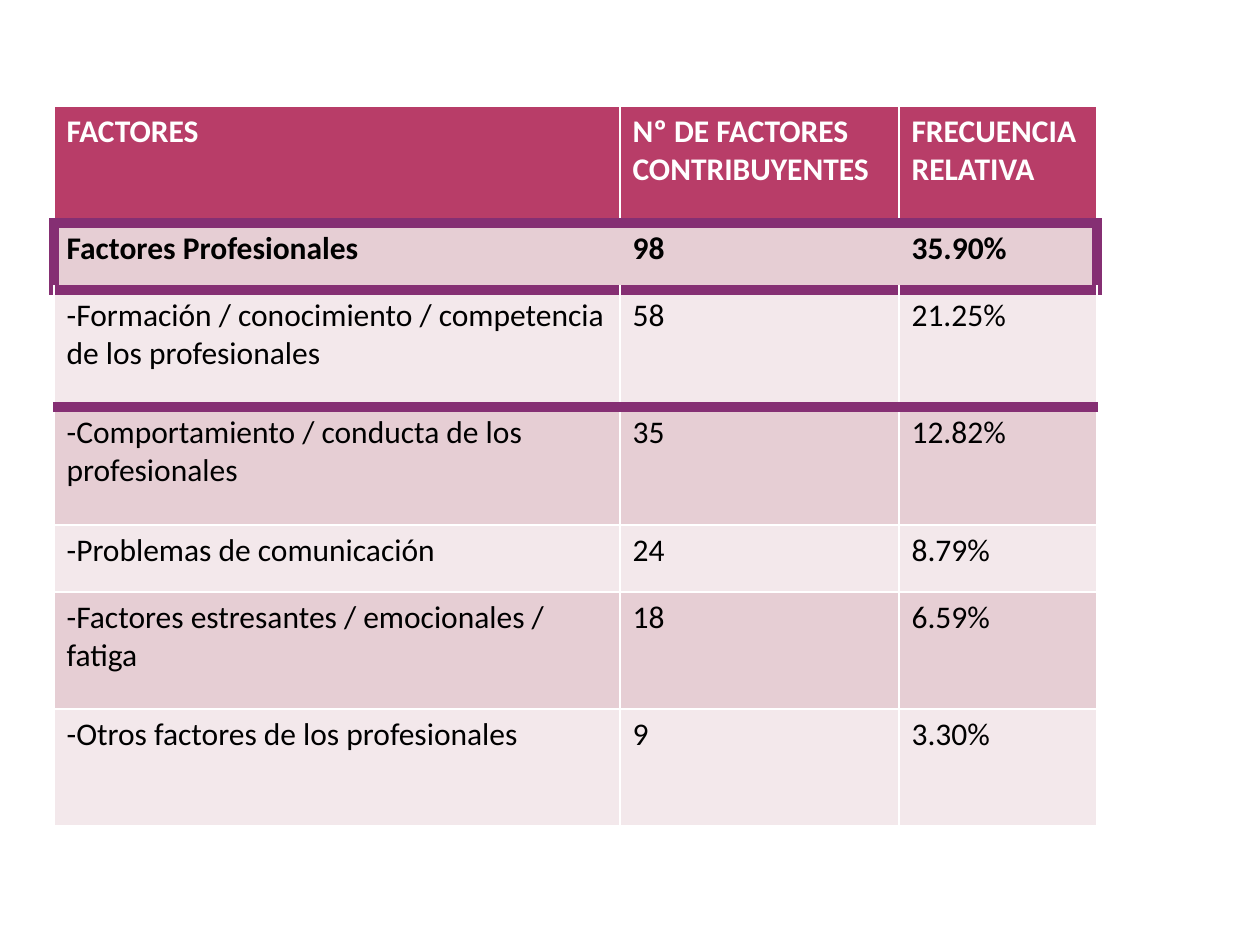
import pptx
import pptx.dml.color
import pptx.oxml.ns
import pptx.util
from lxml import etree

HEADINGS = ("FACTORES", "Nº DE FACTORES CONTRIBUYENTES", "FRECUENCIA RELATIVA")
FACTORS = [
    ("Factores Profesionales", "98", "35.90%"),
    ("-Formación / conocimiento / competencia de los profesionales", "58", "21.25%"),
    ("-Comportamiento / conducta de los profesionales", "35", "12.82%"),
    ("-Problemas de comunicación", "24", "8.79%"),
    ("-Factores estresantes / emocionales / fatiga", "18", "6.59%"),
    ("-Otros factores de los profesionales", "9", "3.30%"),
]
COLORS = {
    "header": "B83D68",
    "odd": "E6CED4",
    "even": "F3E8EB",
    "grid": "FFFFFF",
    "highlight": "852F73",
    "header_text": "FFFFFF",
    "text": "000000",
}
FONT = "Calibri"
SLIDE_SIZE = (1260, 945)
TABLE_ORIGIN = (54, 106)
COLUMN_WIDTHS = (566, 279, 198)
ROW_HEIGHTS = (117, 67, 117, 118, 67, 117, 117)
TOTAL_ROW = 1
HIGHLIGHTED_RULES = (1, 2, 3)
PX = 914400 // 126


def rgb(name):
    return pptx.dml.color.RGBColor.from_string(COLORS[name])


def add_border(cell, side, color, points):
    properties = cell._tc.get_or_add_tcPr()
    line = etree.SubElement(properties, pptx.oxml.ns.qn(f"a:ln{side}"))
    line.set("w", str(pptx.util.Pt(points)))
    if color is None:
        etree.SubElement(line, pptx.oxml.ns.qn("a:noFill"))
        return
    fill = etree.SubElement(line, pptx.oxml.ns.qn("a:solidFill"))
    etree.SubElement(fill, pptx.oxml.ns.qn("a:srgbClr")).set("val", COLORS[color])


def add_borders(cell, row, column):
    grid, highlight = ("grid", 1), ("highlight", 6)
    for side, edge in (("L", column), ("R", column + 1)):
        outer = edge in (0, len(COLUMN_WIDTHS))
        total = highlight if outer else (None, 1)
        add_border(cell, side, *(total if row == TOTAL_ROW else grid))
    for side, edge in (("T", row), ("B", row + 1)):
        add_border(cell, side, *(highlight if edge in HIGHLIGHTED_RULES else grid))


def fill_cell(cell, text, row, column):
    add_borders(cell, row, column)
    band = "header" if row == 0 else "odd" if row % 2 else "even"
    cell.fill.solid()
    cell.fill.fore_color.rgb = rgb(band)
    run = cell.text_frame.paragraphs[0].add_run()
    run.text = text
    run.font.name = FONT
    run.font.size = pptx.util.Pt(18)
    run.font.bold = row <= TOTAL_ROW
    run.font.color.rgb = rgb("header_text" if row == 0 else "text")


def main():
    deck = pptx.Presentation()
    deck.slide_width, deck.slide_height = (length * PX for length in SLIDE_SIZE)
    slide = deck.slides.add_slide(deck.slide_layouts[6])
    content = [HEADINGS, *FACTORS]
    left, top = TABLE_ORIGIN
    factors = slide.shapes.add_table(
        len(content), len(HEADINGS), left * PX, top * PX,
        sum(COLUMN_WIDTHS) * PX, sum(ROW_HEIGHTS) * PX,
    ).table
    for column, width in zip(factors.columns, COLUMN_WIDTHS):
        column.width = width * PX
    for row, height in zip(factors.rows, ROW_HEIGHTS):
        row.height = height * PX
    for row, texts in enumerate(content):
        for column, text in enumerate(texts):
            fill_cell(factors.cell(row, column), text, row, column)
    deck.save("out.pptx")


if __name__ == "__main__":
    main()
